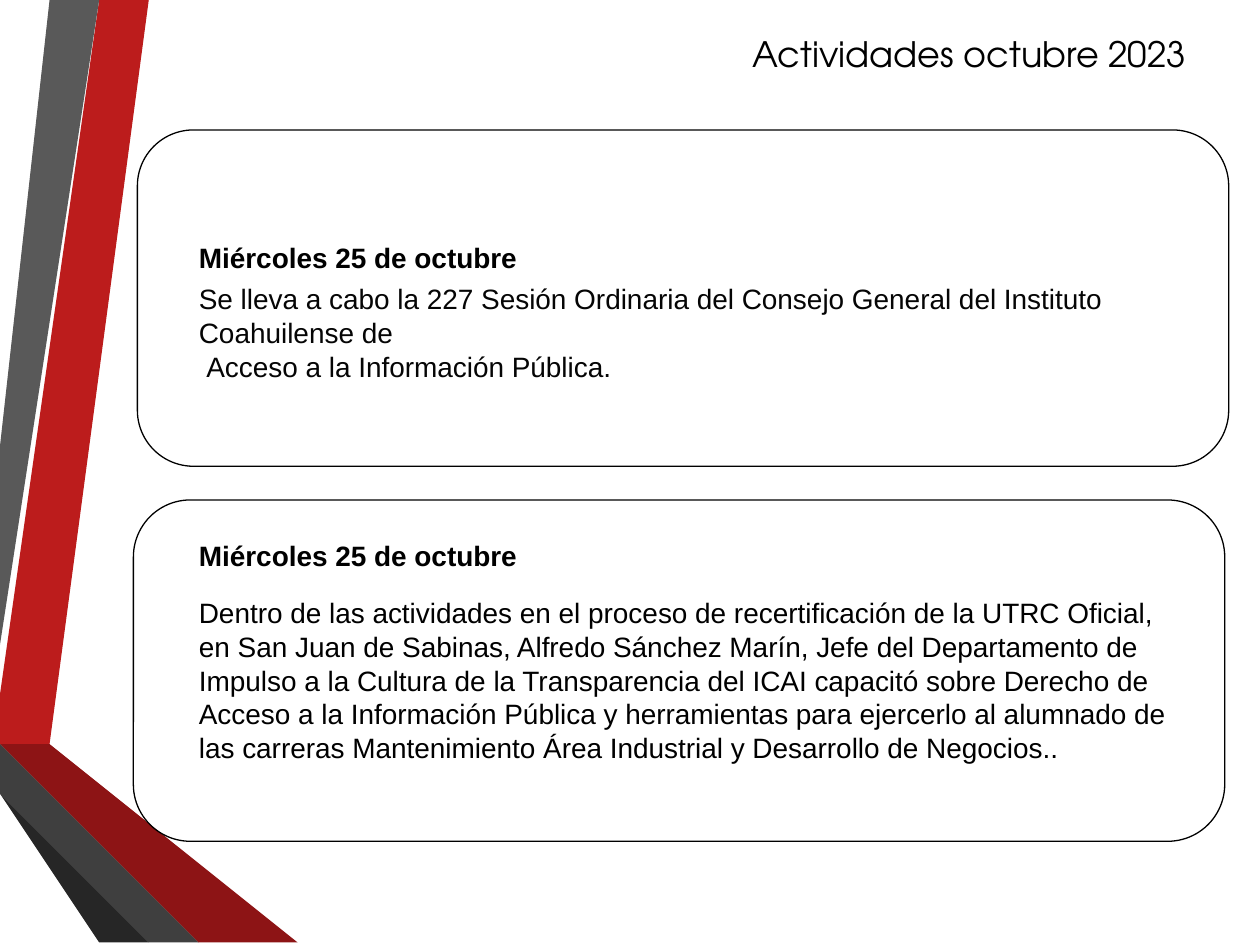
from dataclasses import dataclass

from pptx import Presentation
from pptx.dml.color import RGBColor
from pptx.enum.shapes import MSO_SHAPE
from pptx.enum.text import MSO_ANCHOR, MSO_AUTO_SIZE, PP_ALIGN
from pptx.util import Cm, Pt

CARD_SHAPE = MSO_SHAPE.FLOWCHART_ALTERNATE_PROCESS
TOP = MSO_ANCHOR.TOP
NO_AUTOFIT = MSO_AUTO_SIZE.NONE
LEFT, CENTER = PP_ALIGN.LEFT, PP_ALIGN.CENTER
TITLE_ONLY = 5


@dataclass(frozen=True)
class Theme:
    """Colours, fonts and sizes of the slide."""
    black: str = "000000"
    ink: str = "050505"
    red: str = "BC1C1C"
    deep_red: str = "8D1415"
    shadow_red: str = "5E0D0E"
    gray: str = "595959"
    charcoal: str = "3F3F3F"
    shadow_gray: str = "262626"
    title_font: str = "TeX Gyre Adventor"
    body_font: str = "Arial"
    title_size: int = 20
    body_size: int = 16
    line_width: float = 0.75


@dataclass(frozen=True)
class Box:
    """A rectangle in centimetres."""
    left: float
    top: float
    width: float
    height: float

    def inner(self, left, top, width, height):
        """Return a box placed relative to this one."""
        return Box(self.left + left, self.top + top, width, height)

    def lengths(self):
        """Return left, top, width and height as lengths."""
        return [Cm(value) for value in (self.left, self.top, self.width, self.height)]


THEME = Theme()
TITLE_FORMAT = {"name": THEME.title_font, "size": Pt(THEME.title_size), "bold": False}
BODY_FORMAT = {"name": THEME.body_font, "size": Pt(THEME.body_size), "bold": False}
HEADING_FORMAT = {**BODY_FORMAT, "bold": True}

RIBBONS = [
    (THEME.red, [(0, 13.82), (0, 14.6), (0.56, 14.71), (2.97, 0), (2.26, 0)]),
    (THEME.gray, [(2.11, 0), (1.4, 0), (0, 8.53), (0, 12.85)]),
    (THEME.shadow_gray, [(0, 15.72), (0, 15.77), (2.36, 19.05), (2.51, 19.05)]),
    (THEME.shadow_red, [(0, 14.71), (0, 14.73), (3.96, 19.05), (4.14, 19.05)]),
    (THEME.deep_red, [(0, 14.71), (4.14, 19.05), (5.92, 19.05), (0.56, 14.71), (0, 14.6)]),
    (THEME.charcoal, [(0, 15.72), (2.51, 19.05), (3.84, 19.05), (0, 14.88)]),
]

CARDS = [
    {
        "box": Box(2.77, 2.62, 22, 6.78),
        "heading": "Miércoles 25 de octubre",
        "heading_place": (0.99, 2.1, 20.02, 0.94),
        "body": [
            ("Se lleva a cabo la 227 Sesión Ordinaria del Consejo General del Instituto "
             "Coahuilense de", 0),
            ("Acceso a la Información Pública.", 0.15),
        ],
        "body_place": (0.99, 2.94, 20.93, 2.31),
        "color": THEME.ink,
    },
    {
        "box": Box(2.69, 10.08, 22, 6.88),
        "heading": "Miércoles 25 de octubre",
        "heading_place": (1.07, 0.66, 20.02, 1.63),
        "body": [
            ("Dentro de las actividades en el proceso de recertificación de la UTRC Oficial, "
             "en San Juan de Sabinas, Alfredo Sánchez Marín, Jefe del Departamento de Impulso "
             "a la Cultura de la Transparencia del ICAI capacitó sobre Derecho de Acceso a la "
             "Información Pública y herramientas para ejercerlo al alumnado de las carreras "
             "Mantenimiento Área Industrial y Desarrollo de Negocios..", 0),
        ],
        "body_place": (1.07, 1.81, 20.02, 3.68),
        "color": THEME.black,
    },
]


def write_text(shape, paragraphs, font_format, color, alignment=LEFT):
    """Fill a shape with (text, indent) paragraphs in one format."""
    frame = shape.text_frame
    settings = {"word_wrap": True, "auto_size": NO_AUTOFIT, "vertical_anchor": TOP}
    for name, value in settings.items():
        setattr(frame, name, value)
    for index, (text, indent) in enumerate(paragraphs):
        paragraph = frame.add_paragraph() if index else frame.paragraphs[0]
        paragraph.alignment = alignment
        if indent:
            paragraph._p.get_or_add_pPr().set("marL", str(Cm(indent)))
        run = paragraph.add_run()
        run.text = text
        for name, value in font_format.items():
            setattr(run.font, name, value)
        run.font.color.rgb = RGBColor.from_string(color)


def add_title(slide, box, text):
    """Place and format the title placeholder."""
    title = slide.shapes.title
    title.left, title.top, title.width, title.height = box.lengths()
    write_text(title, [(text, 0)], TITLE_FORMAT, THEME.black, CENTER)


def add_ribbons(slide, box):
    """Draw the folded ribbons along the left edge."""
    for color, points in RIBBONS:
        (start_x, start_y), *others = [(box.left + x, box.top + y) for x, y in points]
        builder = slide.shapes.build_freeform(start_x, start_y, scale=Cm(1))
        builder.add_line_segments(others, close=True)
        ribbon = builder.convert_to_shape()
        ribbon.shadow.inherit = False
        ribbon.fill.solid()
        ribbon.fill.fore_color.rgb = RGBColor.from_string(color)
        ribbon.line.fill.background()


def add_card(slide, box, heading, heading_place, body, body_place, color):
    """Draw an outlined card with a heading and body text."""
    card = slide.shapes.add_shape(CARD_SHAPE, *box.lengths())
    card.shadow.inherit = False
    card.fill.background()
    card.line.color.rgb = RGBColor.from_string(THEME.black)
    card.line.width = Pt(THEME.line_width)
    heading_box = slide.shapes.add_textbox(*box.inner(*heading_place).lengths())
    write_text(heading_box, [(heading, 0)], HEADING_FORMAT, THEME.black)
    body_box = slide.shapes.add_textbox(*box.inner(*body_place).lengths())
    write_text(body_box, body, BODY_FORMAT, color)


def main():
    """Build and save the presentation."""
    presentation = Presentation()
    presentation.slide_width, presentation.slide_height = Cm(25.4), Cm(19.05)
    slide = presentation.slides.add_slide(presentation.slide_layouts[TITLE_ONLY])
    add_ribbons(slide, Box(0, 0, 5.92, 19.05))
    add_title(slide, Box(14.3, 0.53, 10.49, 1.12), "Actividades octubre 2023")
    for card in CARDS:
        add_card(slide, **card)
    presentation.save("out.pptx")


if __name__ == "__main__":
    main()
